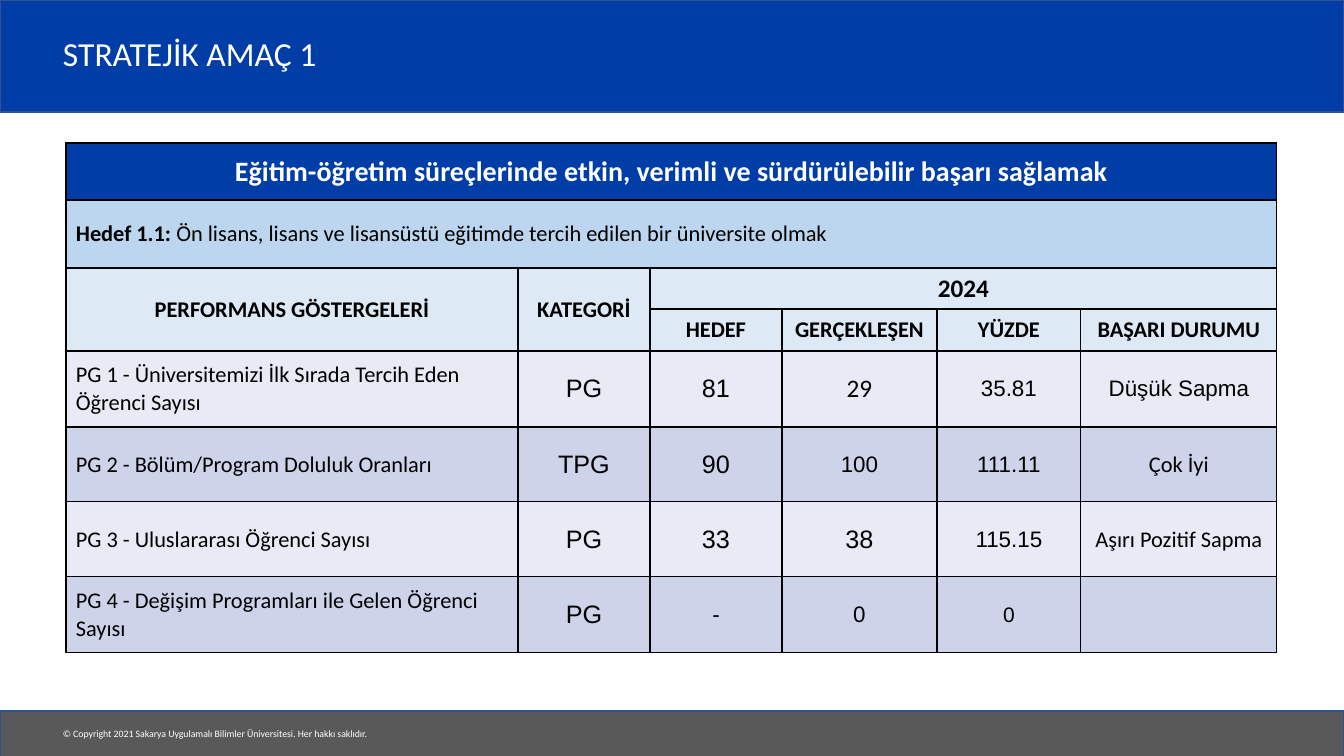
from dataclasses import dataclass

from lxml import etree
from pptx import Presentation
from pptx.dml.color import RGBColor
from pptx.enum.shapes import MSO_SHAPE
from pptx.enum.text import MSO_ANCHOR, PP_ALIGN
from pptx.oxml.ns import qn
from pptx.util import Emu, Pt

RECTANGLE = MSO_SHAPE.RECTANGLE
MIDDLE = MSO_ANCHOR.MIDDLE
LEFT, CENTER = PP_ALIGN.LEFT, PP_ALIGN.CENTER
EMU_PER_PX = 914400 / 100.8
BLANK_LAYOUT = 6


@dataclass(frozen=True)
class Theme:
    blue: str = "003DA6"
    gray: str = "595959"
    bar_line: str = "31538F"
    white: str = "FFFFFF"
    black: str = "000000"
    goal: str = "BBD6EE"
    header: str = "DDEAF6"
    bands: tuple = ("E8EBF5", "CDD4EA")
    sans: str = "Calibri"
    figures: str = "Arial"
    title: int = 24
    heading: int = 20
    large: int = 18
    body: int = 16
    small: int = 15
    footer: int = 7


THEME = Theme()
SANS, FIGURES = THEME.sans, THEME.figures
LARGE, BODY, SMALL = THEME.large, THEME.body, THEME.small

COLUMN_WIDTHS = (452, 132, 132, 155, 144, 196)
ROW_HEIGHTS = (57, 68, 41, 42, 76, 75, 75, 76)
FIRST_BODY_ROW = 4

# Indicator, category, then (text, font, size) for each result
INDICATORS = (
    ("PG 1 - Üniversitemizi İlk Sırada Tercih Eden Öğrenci Sayısı", "PG",
     ("81", FIGURES, LARGE), ("29", SANS, LARGE),
     ("35.81", FIGURES, BODY), ("Düşük Sapma", FIGURES, BODY)),
    ("PG 2 - Bölüm/Program Doluluk Oranları", "TPG",
     ("90", FIGURES, LARGE), ("100", FIGURES, BODY),
     ("111.11", FIGURES, BODY), ("Çok İyi", SANS, BODY)),
    ("PG 3 - Uluslararası Öğrenci Sayısı", "PG",
     ("33", FIGURES, LARGE), ("38", FIGURES, LARGE),
     ("115.15", FIGURES, BODY), ("Aşırı Pozitif Sapma", SANS, BODY)),
    ("PG 4 - Değişim Programları ile Gelen Öğrenci Sayısı", "PG",
     ("-", FIGURES, BODY), ("0", FIGURES, BODY),
     ("0", FIGURES, SMALL), ("", FIGURES, BODY)),
)


def px(length):
    return Emu(round(length * EMU_PER_PX))


def rgb(color):
    return RGBColor.from_string(color)


def format_font(font, name, size, color, bold=False):
    font.name = name
    font.size = Pt(size)
    font.color.rgb = rgb(color)
    font.bold = bold


def add_bar(page, top, height, color):
    bar = page.shapes.add_shape(RECTANGLE, 0, px(top), px(1344), px(height))
    bar.shadow.inherit = False
    bar.fill.solid()
    bar.fill.fore_color.rgb = rgb(color)
    bar.line.color.rgb = rgb(THEME.bar_line)
    bar.line.width = Pt(1)


def add_label(page, text, left, top, width, height, size, line_spacing=1.0):
    box = page.shapes.add_textbox(px(left), px(top), px(width), px(height))
    frame = box.text_frame
    frame.word_wrap = True
    frame.vertical_anchor = MIDDLE
    frame.text = text
    para = frame.paragraphs[0]
    para.line_spacing = line_spacing
    format_font(para.runs[0].font, SANS, size, THEME.white)


def add_borders(cell):
    properties = cell._tc.get_or_add_tcPr()
    for side in ("a:lnL", "a:lnR", "a:lnT", "a:lnB"):
        line = etree.SubElement(properties, qn(side), w=str(Pt(1)))
        fill = etree.SubElement(line, qn("a:solidFill"))
        etree.SubElement(fill, qn("a:srgbClr"), val=THEME.black)


def paint_cell(cell, color):
    add_borders(cell)
    cell.fill.solid()
    cell.fill.fore_color.rgb = rgb(color)
    cell.vertical_anchor = MIDDLE
    cell.margin_left = cell.margin_right = px(10)
    cell.margin_top = cell.margin_bottom = px(5)


def write_cell(cell, text, font=SANS, size=BODY, bold=False,
               align=CENTER, color=THEME.black):
    para = cell.text_frame.paragraphs[0]
    para.text = text
    para.alignment = align
    format_font(para.font, font, size, color, bold)
    for span in para.runs:
        format_font(span.font, font, size, color, bold)


def add_span(cell, text, font):
    span = cell.text_frame.paragraphs[0].add_run()
    span.text = text
    format_font(span.font, font, BODY, THEME.black)


def add_grid(page):
    frame = page.shapes.add_table(
        len(ROW_HEIGHTS), len(COLUMN_WIDTHS), px(66), px(143),
        px(sum(COLUMN_WIDTHS)), px(sum(ROW_HEIGHTS)))
    table = frame.table
    for column, width in zip(table.columns, COLUMN_WIDTHS):
        column.width = px(width)
    for row, height in zip(table.rows, ROW_HEIGHTS):
        row.height = px(height)

    fills = (THEME.blue, THEME.goal, THEME.header, THEME.header) + THEME.bands * 2
    for row, color in zip(table.rows, fills):
        for cell in row.cells:
            paint_cell(cell, color)
    return table


def fill_header(table):
    merges = (((0, 0), (0, 5)), ((1, 0), (1, 5)), ((2, 0), (3, 0)),
              ((2, 1), (3, 1)), ((2, 2), (2, 5)))
    for first, last in merges:
        table.cell(*first).merge(table.cell(*last))

    write_cell(table.cell(0, 0),
               "Eğitim-öğretim süreçlerinde etkin, verimli ve sürdürülebilir başarı sağlamak",
               size=THEME.heading, bold=True, color=THEME.white)
    goal = table.cell(1, 0)
    write_cell(goal, "Hedef 1.1: ", bold=True, align=LEFT)
    add_span(goal, "Ön lisans, lisans ve lisansüstü eğitimde tercih edilen bir üniversite olmak", SANS)

    write_cell(table.cell(2, 0), "PERFORMANS GÖSTERGELERİ", bold=True)
    write_cell(table.cell(2, 1), "KATEGORİ", bold=True)
    write_cell(table.cell(2, 2), "2024", size=LARGE, bold=True)
    result_names = ("HEDEF", "GERÇEKLEŞEN", "YÜZDE", "BAŞARI DURUMU")
    for column, name in enumerate(result_names, start=2):
        write_cell(table.cell(3, column), name, bold=True)


def fill_indicators(table):
    for row, (name, category, *results) in enumerate(INDICATORS, FIRST_BODY_ROW):
        write_cell(table.cell(row, 0), name, align=LEFT)
        write_cell(table.cell(row, 1), category, FIGURES, LARGE)
        for column, (text, font, size) in enumerate(results, start=2):
            write_cell(table.cell(row, column), text, font, size)


def main():
    deck = Presentation()
    deck.slide_width, deck.slide_height = px(1344), px(756)
    page = deck.slides.add_slide(deck.slide_layouts[BLANK_LAYOUT])

    # Title and footer bars
    add_bar(page, 0, 112, THEME.blue)
    add_bar(page, 711, 46, THEME.gray)
    add_label(page, "STRATEJİK AMAÇ 1", 53, 19, 1112, 74, THEME.title, 0.9)
    add_label(page, "© Copyright 2021 Sakarya Uygulamalı Bilimler Üniversitesi. Her hakkı saklıdır.",
              53, 723, 332, 22, THEME.footer)

    # Performance table
    table = add_grid(page)
    fill_header(table)
    fill_indicators(table)

    deck.save("out.pptx")


if __name__ == "__main__":
    main()
